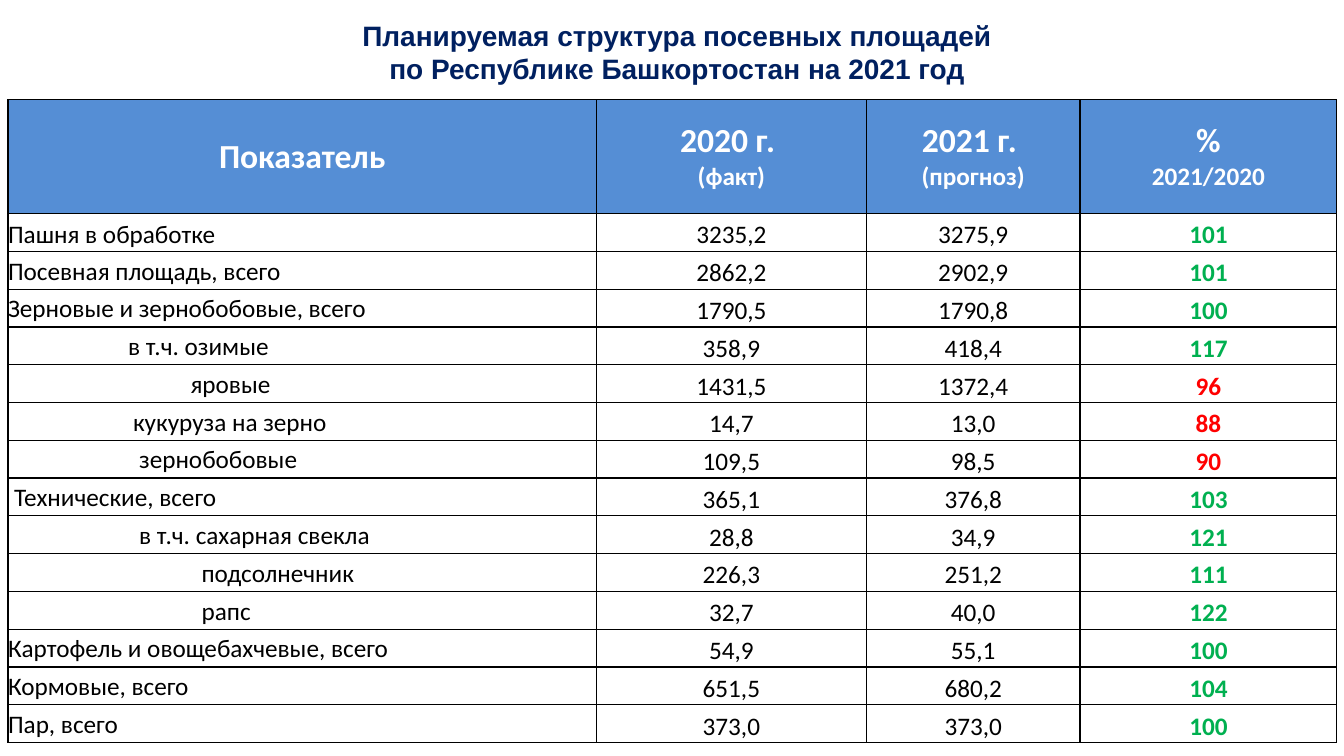
from lxml.etree import SubElement
from pptx import Presentation
from pptx.dml.color import RGBColor
from pptx.enum.text import MSO_ANCHOR, PP_ALIGN
from pptx.oxml.ns import qn
from pptx.util import Inches, Pt

NAVY = RGBColor(0x00, 0x20, 0x60)
BLUE = RGBColor(0x55, 0x8E, 0xD5)
WHITE = RGBColor(0xFF, 0xFF, 0xFF)
BLACK = RGBColor(0x00, 0x00, 0x00)
GREEN = RGBColor(0x00, 0xB0, 0x50)
RED = RGBColor(0xFF, 0x00, 0x00)

TITLE = "Планируемая структура посевных площадей\vпо Республике Башкортостан на 2021 год"
HEADS = ["Показатель", "2020 г. \n(факт)", "2021 г. \n(прогноз)", "%\n2021/2020"]
WIDTHS = [5.84, 2.68, 2.12, 2.55]
HEAD_SHARE = 0.177
CROPS = [
    (0, "Пашня в обработке", "3235,2", "3275,9", "101"),
    (0, "Посевная площадь, всего", "2862,2", "2902,9", "101"),
    (0, "Зерновые и зернобобовые, всего", "1790,5", "1790,8", "100"),
    (1.19, "в т.ч. озимые", "358,9", "418,4", "117"),
    (1.81, "яровые", "1431,5", "1372,4", "96"),
    (1.24, "кукуруза на зерно", "14,7", "13,0", "88"),
    (1.3, "зернобобовые", "109,5", "98,5", "90"),
    (0.06, "Технические, всего", "365,1", "376,8", "103"),
    (1.3, "в т.ч. сахарная свекла", "28,8", "34,9", "121"),
    (1.92, "подсолнечник", "226,3", "251,2", "111"),
    (1.92, "рапс", "32,7", "40,0", "122"),
    (0, "Картофель и овощебахчевые, всего", "54,9", "55,1", "100"),
    (0, "Кормовые, всего", "651,5", "680,2", "104"),
    (0, "Пар, всего", "373,0", "373,0", "100"),
]


def style(para, name, size, color, bold, align=PP_ALIGN.CENTER):
    """Set the alignment of a paragraph and the font of its runs."""
    para.alignment = align
    for run in para.runs:
        run.font.name = name
        run.font.size = Pt(size)
        run.font.bold = bold
        run.font.color.rgb = color


def frame(cell, fill):
    """Give a cell thin black borders and a solid fill."""
    props = cell._tc.get_or_add_tcPr()
    for side in ("lnL", "lnR", "lnT", "lnB"):
        line = SubElement(props, qn("a:" + side), w=str(Pt(1)))
        paint = SubElement(line, qn("a:solidFill"))
        SubElement(paint, qn("a:srgbClr"), val=str(BLACK))
    cell.fill.solid()
    cell.fill.fore_color.rgb = fill


def pad(cell, left, top, right, bottom):
    """Set the four margins of a cell in inches."""
    cell.margin_left, cell.margin_top = Inches(left), Inches(top)
    cell.margin_right, cell.margin_bottom = Inches(right), Inches(bottom)


def add_title(slide, left, top, width, height):
    """Place the slide title in its box."""
    text = slide.shapes.add_textbox(left, top, width, height).text_frame
    text.word_wrap = True
    text.vertical_anchor = MSO_ANCHOR.MIDDLE
    text.text = TITLE
    style(text.paragraphs[0], "Arial", 20, NAVY, True)


def fill_head(cell, label):
    """Fill a header cell, with its second line smaller."""
    frame(cell, BLUE)
    pad(cell, 0.13, 0.05, 0.13, 0.05)
    cell.vertical_anchor = MSO_ANCHOR.MIDDLE
    cell.text_frame.text = label
    for para, size in zip(cell.text_frame.paragraphs, (24, 18)):
        style(para, "Calibri", size, WHITE, True)


def fill_cell(cell, text, color, bold, align, anchor):
    """Fill a body cell with one line of text."""
    frame(cell, WHITE)
    cell.vertical_anchor = anchor
    cell.text_frame.text = text
    para = cell.text_frame.paragraphs[0]
    para.line_spacing = 1.15
    para.space_after = Pt(10)
    style(para, "Calibri", 18, color, bold, align)


def add_crops(slide, left, top, width, height):
    """Place the table of sown areas in its box."""
    shape = slide.shapes.add_table(len(CROPS) + 1, len(HEADS), left, top, width, height)
    table = shape.table
    table.horz_banding = False
    for column, part in zip(table.columns, WIDTHS):
        column.width = int(width * part / sum(WIDTHS))
    head = int(height * HEAD_SHARE)
    for row in table.rows:
        row.height = (height - head) // len(CROPS)
    table.rows[0].height = head
    for col, label in enumerate(HEADS):
        fill_head(table.cell(0, col), label)
    for row, (indent, name, *values) in enumerate(CROPS, 1):
        cell = table.cell(row, 0)
        pad(cell, indent, 0, 0, 0)
        anchor = MSO_ANCHOR.MIDDLE if row == 1 else MSO_ANCHOR.TOP
        fill_cell(cell, name, BLACK, False, PP_ALIGN.LEFT, anchor)
        trend = GREEN if int(values[-1]) >= 100 else RED
        for col, value in enumerate(values, 1):
            cell = table.cell(row, col)
            pad(cell, 0.01, 0.01, 0.01, 0)
            last = col == len(values)
            color = trend if last else BLACK
            fill_cell(cell, value, color, last, PP_ALIGN.CENTER, MSO_ANCHOR.MIDDLE)


def main():
    """Build the slide and save it."""
    deck = Presentation()
    deck.slide_width, deck.slide_height = Inches(13.33), Inches(7.5)
    slide = deck.slides.add_slide(deck.slide_layouts[6])
    add_title(slide, Inches(0.26), Inches(0.12), Inches(12.91), Inches(0.79))
    add_crops(slide, Inches(0.08), Inches(0.99), Inches(13.18), Inches(6.38))
    deck.save("out.pptx")


if __name__ == "__main__":
    main()
